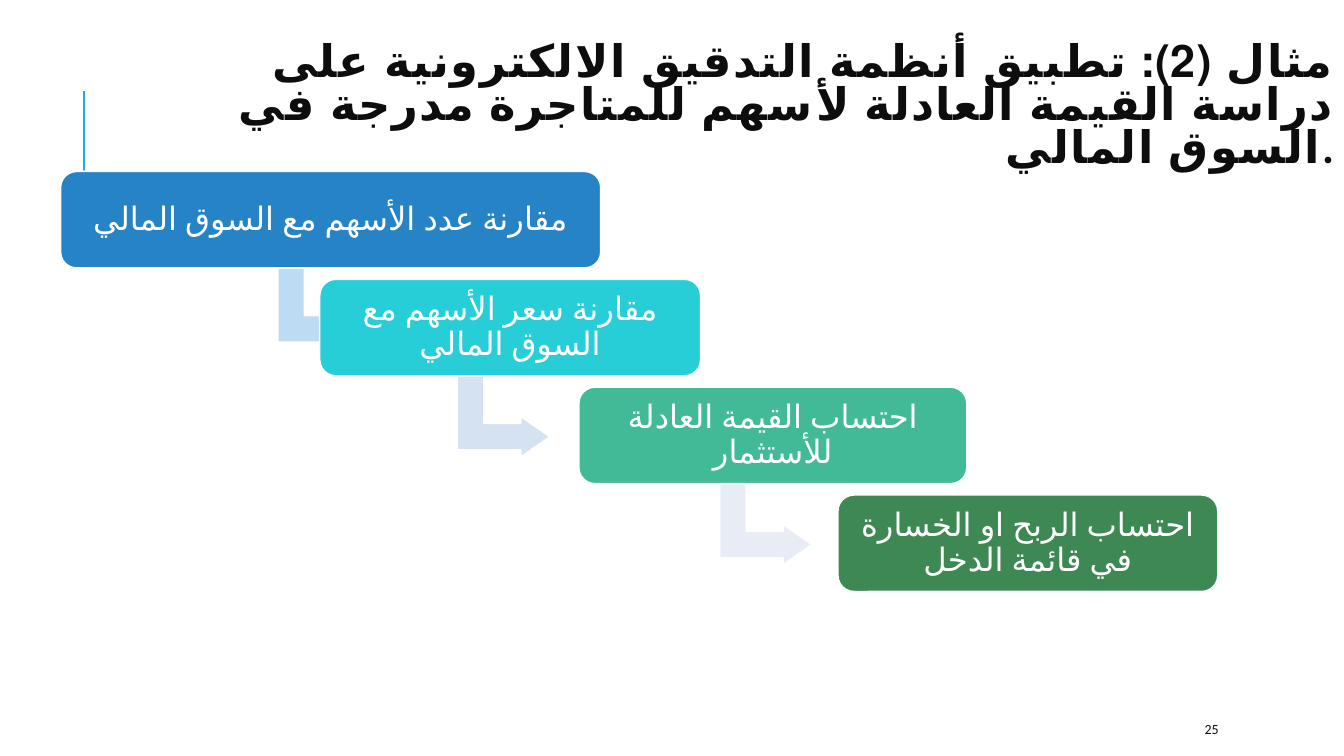
from dataclasses import dataclass

from pptx import Presentation
from pptx.dml.color import RGBColor
from pptx.enum.lang import MSO_LANGUAGE_ID as Language
from pptx.enum.shapes import MSO_CONNECTOR, MSO_SHAPE as Preset
from pptx.enum.text import MSO_ANCHOR as Anchor, PP_ALIGN as Align
from pptx.oxml.ns import qn
from pptx.util import Inches, Pt
from lxml.etree import SubElement

INK = "0D0D0D"
WHITE = "FFFFFF"
FIRST_LEFT, FIRST_TOP = 0.6, 1.7
STEP_RIGHT, STEP_DOWN = 2.57, 1.07
STEP_HEIGHT = 0.96
ARROW_DROP = 0.9


@dataclass
class Arrow:
    left: float
    color: str


@dataclass
class Step:
    text: str
    width: float
    color: str
    arrow: Arrow | None = None


STEPS = [
    Step("مقارنة عدد الأسهم مع السوق المالي", 5.36, "2683C6", Arrow(2.81, "BDDBF2")),
    Step("مقارنة سعر الأسهم مع السوق المالي", 3.78, "27CED7", Arrow(4.59, "D4E2F2")),
    Step("احتساب القيمة العادلة للأستثمار", 3.85, "42BA97", Arrow(7.19, "E8EDF5")),
    Step("احتساب الربح او الخسارة في قائمة الدخل", 3.77, "3E8853"),
]


def rgb(color: str) -> RGBColor:
    return RGBColor.from_string(color)


def write(shape, text: str, font: str, size: float, color: str, align: Align,
          line_spacing: float = 1.0, bold: bool = False,
          language: Language = Language.ARABIC):
    """Fill a shape with one paragraph and return its run."""
    frame = shape.text_frame
    frame.text = text
    frame.word_wrap = True
    frame.vertical_anchor = Anchor.MIDDLE
    paragraph = frame.paragraphs[0]
    paragraph.alignment = align
    paragraph.line_spacing = line_spacing
    run = paragraph.runs[0]
    run.font.name = font
    run.font.size = Pt(size)
    run.font.bold = bold
    run.font.color.rgb = rgb(color)
    run.font.language_id = language
    return run


def add_block(slide, preset: Preset, left: float, top: float, width: float,
              height: float, color: str, adjustments: list[float]):
    block = slide.shapes.add_shape(
        preset, Inches(left), Inches(top), Inches(width), Inches(height))
    block.shadow.inherit = False
    block.fill.solid()
    block.fill.fore_color.rgb = rgb(color)
    block.line.color.rgb = rgb(WHITE)
    block.line.width = Pt(1.25)
    for index, value in enumerate(adjustments):
        block.adjustments[index] = value
    return block


def add_step(slide, index: int, step: Step) -> None:
    left = FIRST_LEFT + index * STEP_RIGHT
    top = FIRST_TOP + index * STEP_DOWN
    if step.arrow:
        arrow = add_block(slide, Preset.BENT_UP_ARROW, step.arrow.left, top + ARROW_DROP,
                          0.81, 0.92, step.arrow.color, [0.328, 0.25, 0.358])
        arrow.rotation = 90
    box = add_block(slide, Preset.ROUNDED_RECTANGLE, left, top, step.width,
                    STEP_HEIGHT, step.color, [0.167])
    frame = box.text_frame
    frame.margin_left = frame.margin_right = Inches(0.1)
    frame.margin_top = frame.margin_bottom = Inches(0.1)
    write(box, step.text, "Cabin", 23, WHITE, Align.CENTER, line_spacing=0.9)


def add_accent_line(slide) -> None:
    accent = slide.shapes.add_connector(
        MSO_CONNECTOR.STRAIGHT, Inches(0.83), Inches(1.9), Inches(0.83), Inches(0.9))
    accent.line.color.rgb = rgb("1CADE4")
    accent.line.width = Pt(1.5)
    SubElement(accent._element.spPr, qn("a:effectLst"))


def main() -> None:
    deck = Presentation()
    deck.slide_width, deck.slide_height = Inches(13.33), Inches(7.5)
    slide = deck.slides.add_slide(deck.slide_layouts[6])

    # Accent line and title
    add_accent_line(slide)
    title = slide.shapes.add_textbox(
        Inches(1.75), Inches(0.4), Inches(11.58), Inches(1.34))
    heading = write(
        title,
        "مثال (2): تطبيق أنظمة التدقيق الالكترونية على دراسة القيمة العادلة "
        "لأسهم للمتاجرة مدرجة في السوق المالي.",
        "Calibri", 32, INK, Align.RIGHT, line_spacing=0.8, bold=True)
    heading.font._element.set("spc", "100")

    # Descending steps
    for index, step in enumerate(STEPS):
        add_step(slide, index, step)

    # Slide number
    number = slide.shapes.add_textbox(
        Inches(11.85), Inches(7.08), Inches(1.06), Inches(0.3))
    write(number, "25", "Calibri", 10, INK, Align.LEFT, language=Language.ENGLISH_US)

    deck.save("out.pptx")


if __name__ == "__main__":
    main()
